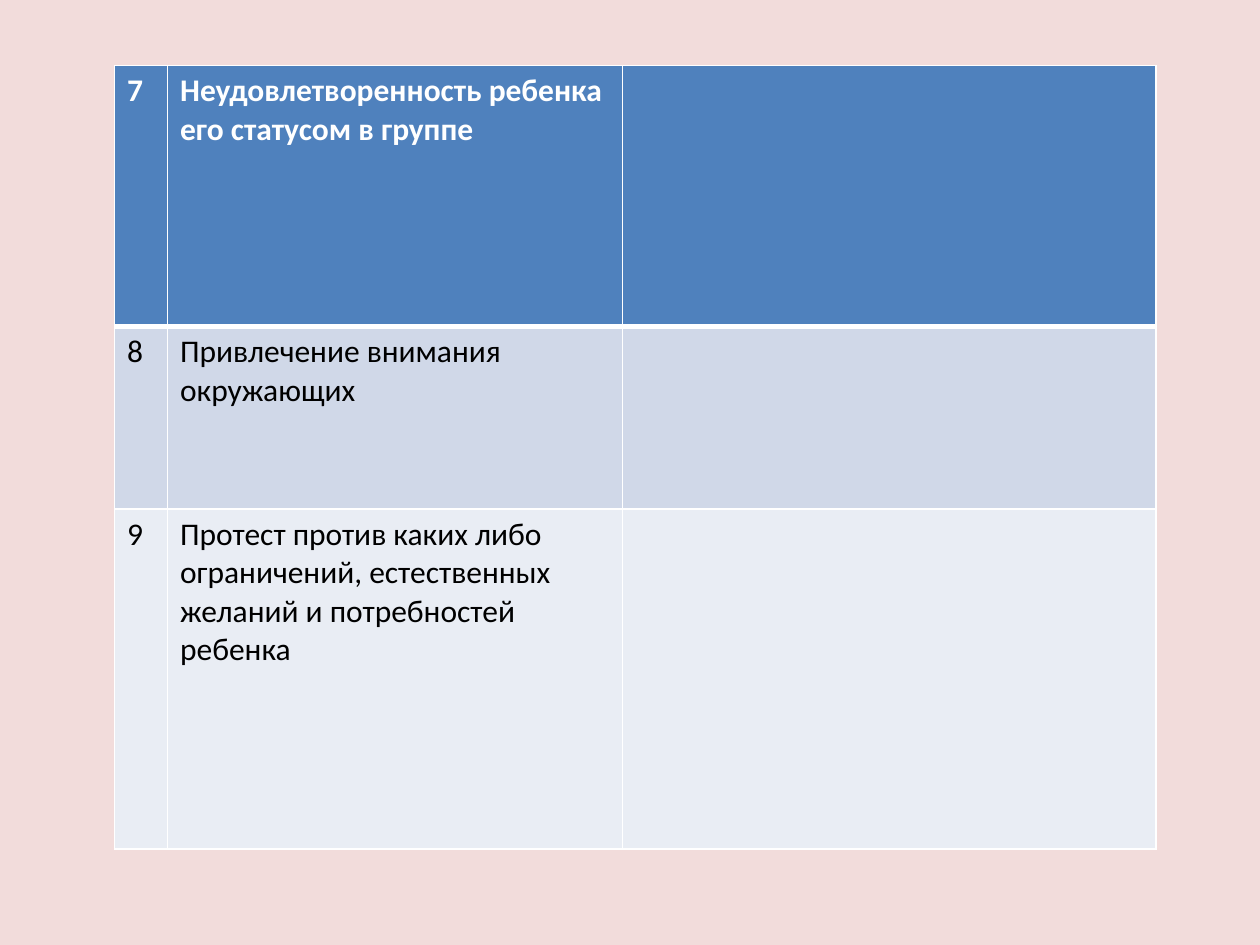
from dataclasses import dataclass

from lxml import etree
from pptx import Presentation
from pptx.dml.color import RGBColor
from pptx.oxml.ns import qn
from pptx.util import Pt


@dataclass(frozen=True)
class Theme:
    font: str = "Calibri"
    size: float = 18
    background: str = "F2DCDB"
    border: str = "FFFFFF"
    border_width: float = 1
    header_border_width: float = 3
    header_text: str = "FFFFFF"
    body_text: str = "000000"
    row_fills: tuple = ("4F81BD", "D0D8E8", "E9EDF4")


THEME = Theme()
PAGE_SIZE = (720, 540)
TABLE_ORIGIN = (65.5, 37.5)
COLUMN_WIDTHS = (30.25, 260, 304.75)
ROW_HEIGHTS = (149, 104.5, 194.25)
REASONS = [
    ("7", "Неудовлетворенность ребенка его статусом в группе", ""),
    ("8", "Привлечение внимания окружающих", ""),
    ("9", "Протест против каких либо ограничений, естественных желаний и потребностей ребенка", ""),
]


def set_borders(cell, widths):
    properties = cell._tc.get_or_add_tcPr()
    for position, (side, width) in enumerate(widths.items()):
        line = etree.Element(qn(f"a:ln{side}"), w=str(Pt(width)))
        fill = etree.SubElement(line, qn("a:solidFill"))
        etree.SubElement(fill, qn("a:srgbClr"), val=THEME.border)
        properties.insert(position, line)


def format_cell(cell, text, row_index):
    is_header = row_index == 0
    cell.fill.solid()
    cell.fill.fore_color.rgb = RGBColor.from_string(THEME.row_fills[row_index])
    widths = dict.fromkeys("LRTB", THEME.border_width)
    if is_header:
        widths["B"] = THEME.header_border_width
    elif row_index == 1:
        widths["T"] = THEME.header_border_width
    set_borders(cell, widths)
    cell.text_frame.text = text
    for para in cell.text_frame.paragraphs:
        for span in para.runs:
            span.font.name = THEME.font
            span.font.size = Pt(THEME.size)
            span.font.bold = is_header
            color = THEME.header_text if is_header else THEME.body_text
            span.font.color.rgb = RGBColor.from_string(color)


def main():
    deck = Presentation()
    deck.slide_width, deck.slide_height = map(Pt, PAGE_SIZE)
    page = deck.slides.add_slide(deck.slide_layouts.get_by_name("Blank"))
    page.background.fill.solid()
    page.background.fill.fore_color.rgb = RGBColor.from_string(THEME.background)

    left, top = TABLE_ORIGIN
    table = page.shapes.add_table(
        len(REASONS), len(COLUMN_WIDTHS), Pt(left), Pt(top),
        Pt(sum(COLUMN_WIDTHS)), Pt(sum(ROW_HEIGHTS)),
    ).table
    for column, width in zip(table.columns, COLUMN_WIDTHS):
        column.width = Pt(width)
    for row_index, (row, height, texts) in enumerate(zip(table.rows, ROW_HEIGHTS, REASONS)):
        row.height = Pt(height)
        for cell, text in zip(row.cells, texts):
            format_cell(cell, text, row_index)

    deck.save("out.pptx")


if __name__ == "__main__":
    main()
